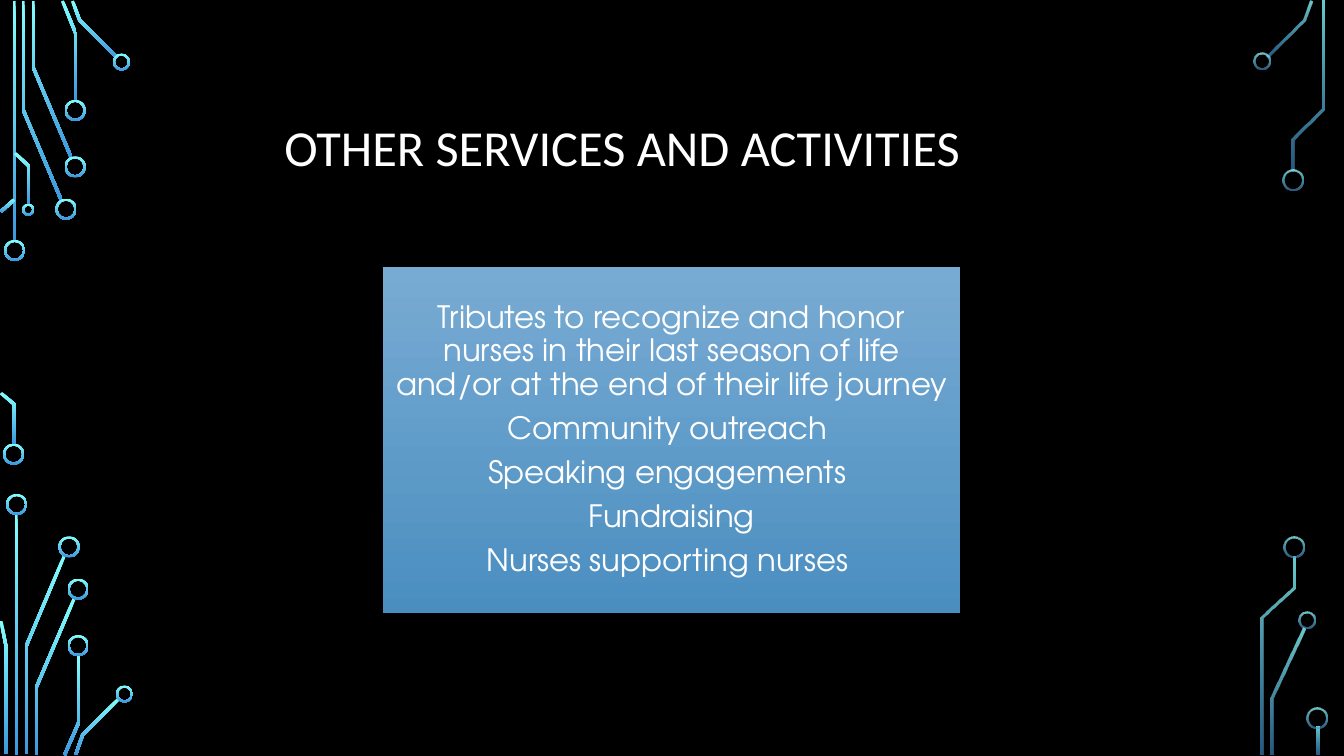
from math import hypot

from lxml import etree
from pptx import Presentation
from pptx.dml.color import RGBColor
from pptx.enum.shapes import MSO_SHAPE
from pptx.enum.text import MSO_ANCHOR, PP_ALIGN
from pptx.oxml.ns import qn
from pptx.util import Emu, Pt

RECT, DONUT = MSO_SHAPE.RECTANGLE, MSO_SHAPE.DONUT
MIDDLE = MSO_ANCHOR.MIDDLE
LEFT, CENTER = PP_ALIGN.LEFT, PP_ALIGN.CENTER

EMU_PER_PX = 9144
SLIDE_SIZE = (1333, 750)
TRACE_WIDTH = 3
RING_WIDTH = 2
COLORS = {
    "background": "000000",
    "text": "FFFFFF",
    "circuit_top": "82FFFF",
    "circuit_bottom": "3D97DE",
    "panel_top": "78ABD3",
    "panel_bottom": "4A8EC0",
}
CIRCUIT = ("circuit_top", "circuit_bottom")
PANEL = ("panel_top", "panel_bottom")

LEFT_TRACES = [
    [(14, 1), (14, 240)],
    [(61, 199), (23, 109), (23, 1)],
    [(71, 157), (33, 67), (33, 1)],
    [(75, 100), (75, 33), (62, 1)],
    [(116, 57), (79, 20), (72, 1)],
    [(1, 210), (14, 198)],
    [(1, 390), (14, 401), (14, 441)],
    [(15, 152), (29, 165), (29, 203)],
    [(16, 510), (16, 749)],
    [(26, 748), (26, 641), (64, 551)],
    [(1, 616), (6, 641), (6, 748)],
    [(36, 749), (36, 682), (74, 593)],
    [(78, 650), (78, 717), (64, 749)],
    [(75, 749), (82, 729), (118, 693)],
]
LEFT_RINGS = [
    (4, 238, 21), (3, 440, 21), (55, 197, 21), (64, 155, 21),
    (64, 99, 21), (112, 53, 17), (22, 202, 12), (6, 490, 21),
    (58, 532, 21), (67, 574, 21), (67, 630, 21), (115, 680, 17),
]
RIGHT_TRACES = [
    [(1257, 56), (1293, 20), (1300, 1)],
    [(1262, 749), (1262, 693), (1293, 623)],
    [(1282, 169), (1282, 138), (1312, 108), (1312, 1)],
    [(1252, 749), (1252, 613), (1283, 583), (1283, 552)],
    [(1307, 721), (1307, 749)],
]
RIGHT_RINGS = [
    (1243, 52, 17), (1272, 168, 21), (1288, 607, 17),
    (1273, 532, 21), (1296, 702, 21),
]
SERVICES = [
    "Tributes to recognize and honor nurses in their last season of life "
    "and/or at the end of their life journey ",
    "Community outreach ",
    "Speaking engagements ",
    "Fundraising",
    "Nurses supporting nurses ",
]


def px(length):
    return Emu(round(length * EMU_PER_PX))


def rgb(name):
    return RGBColor.from_string(COLORS[name])


def write(frame, *texts, font, size, align=LEFT, inset=0, space_after=0):
    frame.word_wrap = True
    frame.vertical_anchor = MIDDLE
    frame.margin_left = frame.margin_right = px(inset)
    frame.margin_top = frame.margin_bottom = px(inset)
    for index, text in enumerate(texts):
        paragraph = frame.add_paragraph() if index else frame.paragraphs[0]
        paragraph.alignment = align
        paragraph.line_spacing = 0.9
        paragraph.space_after = Pt(space_after)
        run = paragraph.add_run()
        run.text = text
        run.font.name = font
        run.font.size = Pt(size)
        run.font.color.rgb = rgb("text")


def outline(points, width):
    normals = []
    for (x1, y1), (x2, y2) in zip(points, points[1:]):
        length = hypot(x2 - x1, y2 - y1)
        normals.append(((y1 - y2) / length, (x2 - x1) / length))
    one_side, other_side = [], []
    joints = zip(points, normals[:1] + normals, normals + normals[-1:])
    for (x, y), (ax, ay), (bx, by) in joints:
        reach = width / 2 / (1 + ax * bx + ay * by)
        dx, dy = (ax + bx) * reach, (ay + by) * reach
        one_side.append((px(x + dx), px(y + dy)))
        other_side.append((px(x - dx), px(y - dy)))
    return one_side + other_side[::-1]


class ServicesSlide:
    def __init__(self, presentation):
        self.slide = presentation.slides.add_slide(presentation.slide_layouts[6])
        self.shapes = self.slide.shapes
        self.slide.background.fill.solid()
        self.slide.background.fill.fore_color.rgb = rgb("background")

    def paint(self, shape, gradient, opacities=(100, 100)):
        shape.shadow.inherit = False
        shape.line.fill.background()
        shape.fill.gradient()
        shape.fill.gradient_angle = 270
        for stop, name in zip(shape.fill.gradient_stops, gradient):
            stop.color.rgb = rgb(name)
        shades = shape.element.xpath(".//a:gs/a:srgbClr")
        for shade, opacity in zip(shades, opacities):
            if opacity < 100:
                alpha = etree.SubElement(shade, qn("a:alpha"))
                alpha.set("val", str(opacity * 1000))

    def trace(self, points, opacities):
        start, *others = outline(points, TRACE_WIDTH)
        builder = self.shapes.build_freeform(*start)
        builder.add_line_segments(others, close=True)
        self.paint(builder.convert_to_shape(), CIRCUIT, opacities)

    def ring(self, left, top, size, opacities):
        ring = self.shapes.add_shape(DONUT, px(left), px(top), px(size), px(size))
        ring.adjustments[0] = RING_WIDTH / size
        self.paint(ring, CIRCUIT, opacities)

    def circuit(self, traces, rings, opacities):
        for points in traces:
            self.trace(points, opacities)
        for left, top, size in rings:
            self.ring(left, top, size, opacities)

    def title(self, text, *box):
        heading = self.shapes.add_textbox(*map(px, box))
        write(heading.text_frame, text, font="Calibri", size=36)

    def panel(self, texts, *box):
        panel = self.shapes.add_shape(RECT, *map(px, box))
        self.paint(panel, PANEL)
        write(panel.text_frame, *texts, font="TeX Gyre Adventor", size=22,
              align=CENTER, inset=9, space_after=7.7)


def main():
    presentation = Presentation()
    presentation.slide_width, presentation.slide_height = map(px, SLIDE_SIZE)
    services = ServicesSlide(presentation)
    services.circuit(LEFT_TRACES, LEFT_RINGS, (100, 100))
    services.circuit(RIGHT_TRACES, RIGHT_RINGS, (80, 60))
    services.title("OTHER SERVICES AND ACTIVITIES", 282, 68, 926, 162)
    services.panel(SERVICES, 380, 265, 572, 343)
    presentation.save("out.pptx")


if __name__ == "__main__":
    main()
